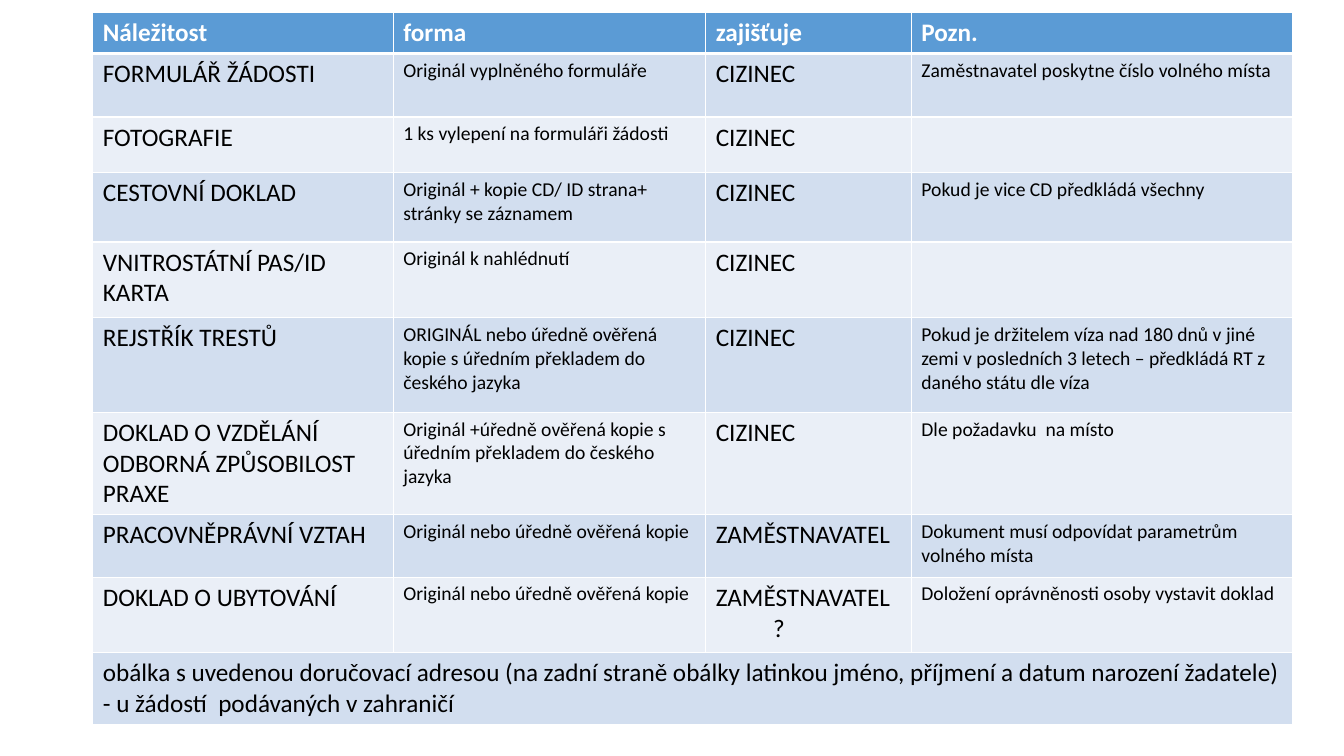
from lxml.etree import SubElement
from pptx import Presentation
from pptx.dml.color import RGBColor
from pptx.oxml.ns import qn
from pptx.util import Pt

COLORS = {
    "header": "5B9BD5",
    "odd_row": "D2DEEF",
    "even_row": "EAEFF7",
    "border": "FFFFFF",
    "header_text": "FFFFFF",
    "body_text": "000000",
}
FONT = "Calibri"
LARGE, SMALL = 18, 14
COLUMN_SIZES = [LARGE, SMALL, LARGE, SMALL]
COLUMN_WIDTHS = [214.6, 223.2, 146.9, 272.2]
ROW_HEIGHTS = [28.8, 45.4, 39.6, 49.7, 54, 67.7, 72, 44.6, 54, 49]

HEADINGS = ["Náležitost", "forma", "zajišťuje", "Pozn."]
REQUIREMENTS = [
    ["FORMULÁŘ ŽÁDOSTI", "Originál vyplněného formuláře", "CIZINEC",
     "Zaměstnavatel poskytne číslo volného místa"],
    ["FOTOGRAFIE", "1 ks vylepení na formuláři žádosti", "CIZINEC", ""],
    ["CESTOVNÍ DOKLAD", "Originál + kopie CD/ ID strana+ stránky se záznamem",
     "CIZINEC", "Pokud je vice CD předkládá všechny"],
    ["VNITROSTÁTNÍ PAS/ID KARTA", "Originál k nahlédnutí", "CIZINEC", ""],
    ["REJSTŘÍK TRESTŮ",
     "ORIGINÁL nebo úředně ověřená kopie s úředním překladem do českého jazyka",
     "CIZINEC",
     "Pokud je držitelem víza nad 180 dnů v jiné zemi v posledních 3 letech"
     " – předkládá RT z daného státu dle víza"],
    ["DOKLAD O VZDĚLÁNÍ\nODBORNÁ ZPŮSOBILOST\nPRAXE",
     "Originál +úředně ověřená kopie s úředním překladem do českého jazyka",
     "CIZINEC", "Dle požadavku  na místo"],
    ["PRACOVNĚPRÁVNÍ VZTAH", "Originál nebo úředně ověřená kopie",
     "ZAMĚSTNAVATEL", "Dokument musí odpovídat parametrům volného místa"],
    ["DOKLAD O UBYTOVÁNÍ", "Originál nebo úředně ověřená kopie",
     "ZAMĚSTNAVATEL\n?", "Doložení oprávněnosti osoby vystavit doklad"],
]
ENVELOPE_NOTE = (
    "obálka s uvedenou doručovací adresou (na zadní straně obálky latinkou "
    "jméno, příjmení a datum narození žadatele)\n"
    "- u žádostí  podávaných v zahraničí"
)


def set_borders(cell, top, bottom):
    properties = cell._tc.get_or_add_tcPr()
    for side, width in (("L", 1), ("R", 1), ("T", top), ("B", bottom)):
        line = SubElement(properties, qn(f"a:ln{side}"), w=str(Pt(width)))
        fill = SubElement(line, qn("a:solidFill"))
        SubElement(fill, qn("a:srgbClr"), val=COLORS["border"])


def style_font(font, size, color, bold):
    font.name = FONT
    font.size = Pt(size)
    font.bold = bold
    font.color.rgb = RGBColor.from_string(COLORS[color])


def fill_cell(cell, text, size, row_index):
    is_header = row_index == 0
    set_borders(cell, top=3 if row_index == 1 else 1, bottom=3 if is_header else 1)
    band = "header" if is_header else "odd_row" if row_index % 2 else "even_row"
    cell.fill.solid()
    cell.fill.fore_color.rgb = RGBColor.from_string(COLORS[band])
    cell.text_frame.text = text
    color = "header_text" if is_header else "body_text"
    for para in cell.text_frame.paragraphs:
        for target in para.runs or [para]:
            style_font(target.font, size, color, is_header)


def indent(para, left):
    para._p.get_or_add_pPr().set("marL", str(Pt(left)))


def add_requirements_table(page):
    rows = [HEADINGS, *REQUIREMENTS, [ENVELOPE_NOTE, "", "", ""]]
    frame = page.shapes.add_table(
        len(rows), len(HEADINGS), Pt(66.3), Pt(9),
        Pt(sum(COLUMN_WIDTHS)), Pt(sum(ROW_HEIGHTS)))
    table = frame.table
    for column, width in zip(table.columns, COLUMN_WIDTHS):
        column.width = Pt(width)
    for row, height in zip(table.rows, ROW_HEIGHTS):
        row.height = Pt(height)
    for row_index, texts in enumerate(rows):
        for column_index, text in enumerate(texts):
            size = COLUMN_SIZES[column_index] if row_index else LARGE
            fill_cell(table.cell(row_index, column_index), text, size, row_index)

    last = len(rows) - 1
    table.cell(last, 0).merge(table.cell(last, len(HEADINGS) - 1))
    question_mark = table.cell(last - 1, 2).text_frame.paragraphs[1]
    indent(question_mark, 41)


def main():
    deck = Presentation()
    deck.slide_width, deck.slide_height = Pt(960), Pt(540)
    page = deck.slides.add_slide(deck.slide_layouts[6])
    add_requirements_table(page)
    deck.save("out.pptx")


if __name__ == "__main__":
    main()
